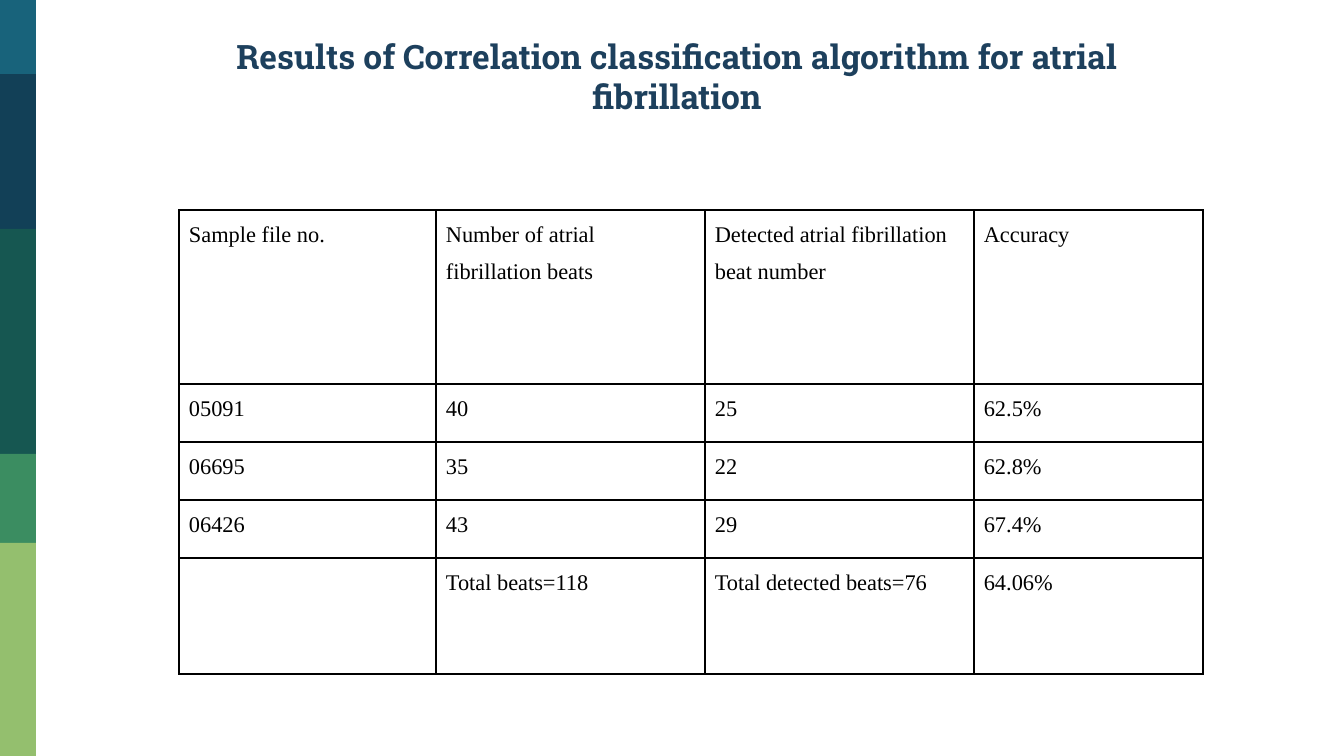
from dataclasses import dataclass
from itertools import pairwise

from lxml.etree import SubElement
from pptx import Presentation
from pptx.dml.color import RGBColor
from pptx.enum.shapes import MSO_SHAPE
from pptx.enum.text import MSO_ANCHOR as Anchor, PP_ALIGN as Align
from pptx.oxml.ns import qn
from pptx.util import Emu, Pt


@dataclass(frozen=True)
class Theme:
    bar_colors: tuple = ("18637B", "124057", "165751", "3B8D61", "94BF6E")
    title_color: str = "1D405D"
    ink: str = "000000"
    title_font: str = "Roboto Slab"
    table_font: str = "Times New Roman"
    title_size: int = 18
    table_size: int = 12
    border_width: int = 1


THEME = Theme()
EMU_PER_INCH = 914400
PX_PER_INCH = 134.4
SLIDE_WIDTH, SLIDE_HEIGHT = 1344, 756

BAR_WIDTH = 36
BAR_EDGES = (0, 74, 229, 454, 543, SLIDE_HEIGHT)

TITLE = "Results of Correlation classification algorithm for atrial fibrillation"
COLUMN_WIDTHS = (257, 269, 269, 229)
ROW_HEIGHTS = (174, 58, 58, 58, 116)
RESULTS = (
    ("Sample file no.", "Number of atrial fibrillation beats",
     "Detected atrial fibrillation beat number", "Accuracy"),
    ("05091", "40", "25", "62.5%"),
    ("06695", "35", "22", "62.8%"),
    ("06426", "43", "29", "67.4%"),
    ("", "Total beats=118", "Total detected beats=76", "64.06%"),
)


def px(length):
    return Emu(round(length * EMU_PER_INCH / PX_PER_INCH))


def style_runs(paragraph, font_name, size, color, bold=False):
    for run in paragraph.runs:
        run.font.name = font_name
        run.font.size = Pt(size)
        run.font.bold = bold
        run.font.color.rgb = RGBColor.from_string(color)


def add_side_bars(slide):
    for (top, bottom), color in zip(pairwise(BAR_EDGES), THEME.bar_colors):
        bar = slide.shapes.add_shape(
            MSO_SHAPE.RECTANGLE, 0, px(top), px(BAR_WIDTH), px(bottom - top))
        bar.shadow.inherit = False
        bar.fill.solid()
        bar.fill.fore_color.rgb = RGBColor.from_string(color)
        bar.line.fill.background()


def add_title(slide, text, left, top, width, height):
    text_frame = slide.shapes.add_textbox(
        px(left), px(top), px(width), px(height)).text_frame
    text_frame.word_wrap = True
    text_frame.vertical_anchor = Anchor.MIDDLE
    text_frame.margin_left = text_frame.margin_right = px(13)
    text_frame.margin_top = text_frame.margin_bottom = px(13)
    text_frame.text = text
    paragraph = text_frame.paragraphs[0]
    paragraph.alignment = Align.CENTER
    style_runs(paragraph, THEME.title_font, THEME.title_size,
               THEME.title_color, bold=True)


def add_cell_borders(cell):
    properties = cell._tc.get_or_add_tcPr()
    for side in ("lnL", "lnR", "lnT", "lnB"):
        line = SubElement(properties, qn(f"a:{side}"),
                          w=str(Pt(THEME.border_width)))
        fill = SubElement(line, qn("a:solidFill"))
        SubElement(fill, qn("a:srgbClr"), val=THEME.ink)


def fill_cell(cell, text):
    add_cell_borders(cell)
    cell.fill.background()
    cell.margin_left = cell.margin_right = px(10)
    cell.margin_top = cell.margin_bottom = 0
    cell.text_frame.text = text
    paragraph = cell.text_frame.paragraphs[0]
    paragraph.line_spacing = 1.5
    style_runs(paragraph, THEME.table_font, THEME.table_size, THEME.ink)


def add_results_table(slide, left, top):
    table = slide.shapes.add_table(
        len(RESULTS), len(COLUMN_WIDTHS), px(left), px(top),
        px(sum(COLUMN_WIDTHS)), px(sum(ROW_HEIGHTS))).table
    table.first_row = False
    table.horz_banding = False
    for column, width in zip(table.columns, COLUMN_WIDTHS):
        column.width = px(width)
    for row, height, values in zip(table.rows, ROW_HEIGHTS, RESULTS):
        row.height = px(height)
        for cell, value in zip(row.cells, values):
            fill_cell(cell, value)


def main():
    presentation = Presentation()
    presentation.slide_width = px(SLIDE_WIDTH)
    presentation.slide_height = px(SLIDE_HEIGHT)
    slide = presentation.slides.add_slide(presentation.slide_layouts[6])
    add_side_bars(slide)
    add_title(slide, TITLE, 145, 31, 1064, 90)
    add_results_table(slide, 179, 210)
    presentation.save("out.pptx")


if __name__ == "__main__":
    main()
